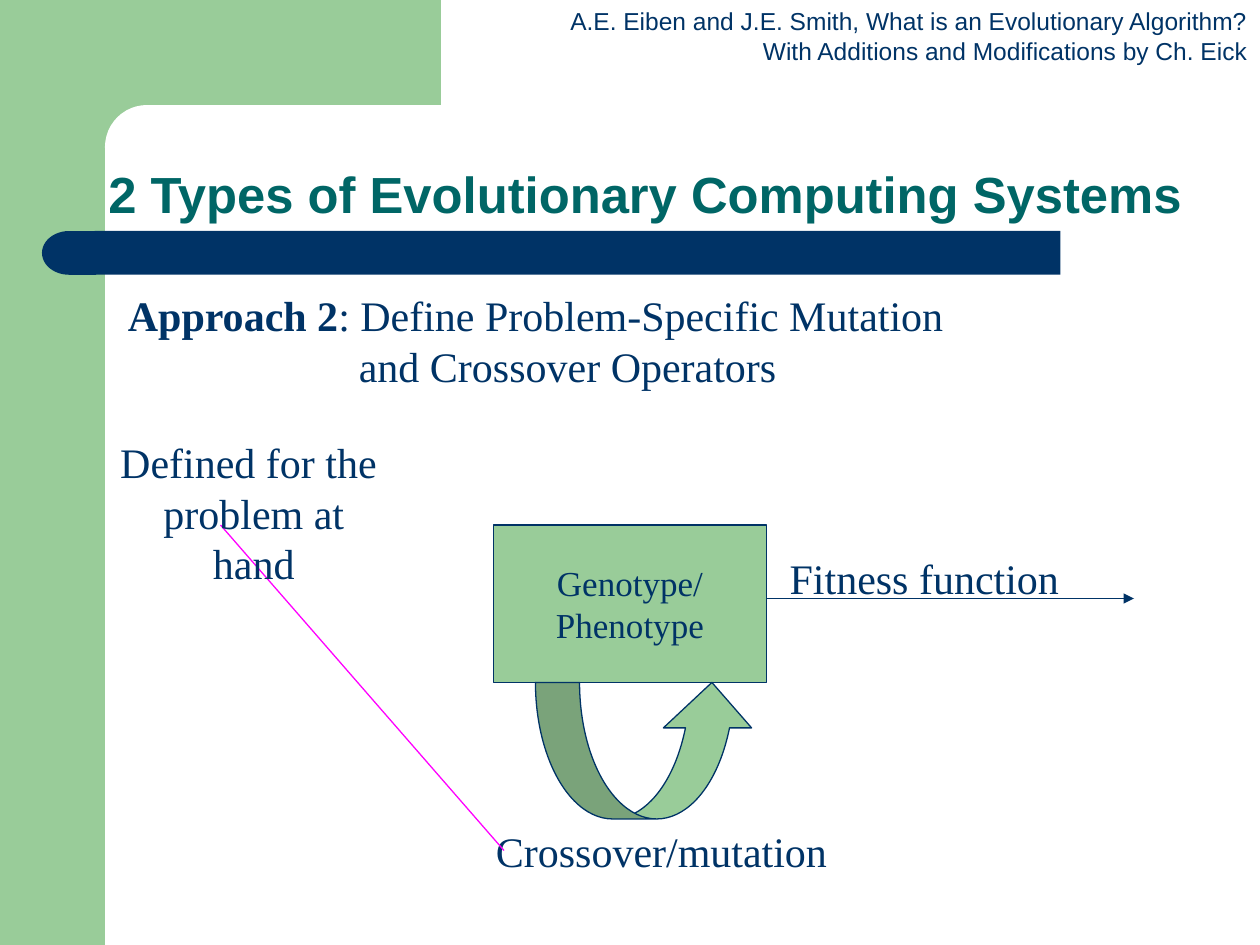
import pptx
import pptx.util
import pptx.dml.color
import pptx.enum.shapes
import pptx.enum.text
import pptx.oxml.ns
from lxml import etree

Pt = pptx.util.Pt
KIND = pptx.enum.shapes.MSO_SHAPE
ALIGN = pptx.enum.text.PP_ALIGN
ANCHOR = pptx.enum.text.MSO_ANCHOR
GREEN, NAVY, TEAL, WHITE, PINK = "99CC99", "003366", "006666", "FFFFFF", "FF00FF"
SERIF = "Times New Roman"


def paint(part, color):
    """Give a fill, line fill or font one solid colour."""
    if hasattr(part, "solid"):
        part.solid()
        part = part.fore_color
    else:
        part = part.color
    part.rgb = pptx.dml.color.RGBColor.from_string(color)


def add_form(slide, kind, box, fill, line=None, adjust=()):
    form = slide.shapes.add_shape(kind, *map(Pt, box))
    form.shadow.inherit = False
    paint(form.fill, fill)
    if line:
        paint(form.line.fill, line)
        form.line.width = Pt(0.75)
    else:
        form.line.fill.background()
    for i, value in enumerate(adjust):
        form.adjustments[i] = value
    return form


def write(shape, lines, size=24, font=SERIF, color=NAVY, align=ALIGN.CENTER,
          anchor=ANCHOR.TOP, wrap=False, bold=False, space=None, indents=()):
    """Fill a shape with lines; each line is a list of (text, bold) or a string."""
    frame = shape.text_frame
    frame.word_wrap = wrap
    frame.vertical_anchor = anchor
    for i, line in enumerate(lines):
        para = frame.paragraphs[0] if i == 0 else frame.add_paragraph()
        para.alignment = align
        if space:
            para.line_spacing = space
        if i < len(indents):
            para._p.get_or_add_pPr().set("marL", str(Pt(indents[i])))
        for text, heavy in [(line, bold)] if isinstance(line, str) else line:
            run = para.add_run()
            run.text = text
            run.font.size = Pt(size)
            run.font.name = font
            run.font.bold = heavy
            paint(run.font, color)


def add_text(slide, box, lines, **style):
    write(slide.shapes.add_textbox(*map(Pt, box)), lines, **style)


def add_line(slide, start, end, color, arrow=False):
    line = slide.shapes.add_connector(
        pptx.enum.shapes.MSO_CONNECTOR.STRAIGHT, *map(Pt, start + end))
    paint(line.line.fill, color)
    line.line.width = Pt(0.75)
    name = pptx.oxml.ns.qn
    if arrow:
        etree.SubElement(line.line._get_or_add_ln(), name("a:tailEnd"), type="triangle")
    etree.SubElement(line._element.spPr, name("a:effectLst"))


def add_frame(slide):
    """Draw the green corner, the navy bar and the credit line."""
    add_form(slide, KIND.RECTANGLE, (0, 0, 60, 540), GREEN)
    add_form(slide, KIND.RECTANGLE, (54, 0, 198, 84), GREEN)
    add_form(slide, KIND.ROUNDED_RECTANGLE, (60, 60, 402, 48), WHITE, adjust=[0.5])
    add_form(slide, KIND.ROUNDED_RECTANGLE, (54, 132, 552, 25), NAVY, adjust=[0])
    cap = add_form(slide, KIND.FLOWCHART_DELAY, (24, 132, 31, 25), NAVY)
    cap.rotation = 180
    add_text(slide, (306, 0, 414, 41),
             ["A.E. Eiben and J.E. Smith, What is an Evolutionary Algorithm?",
              "With Additions and Modifications by Ch. Eick"],
             size=14, font="Arial", align=ALIGN.RIGHT, wrap=True)


def add_flow(slide):
    """Draw the genotype box with its arrows and labels."""
    add_text(slide, (444, 312, 168.5, 36), ["Fitness function"])
    box = add_form(slide, KIND.RECTANGLE, (282, 300, 156, 90), GREEN, NAVY)
    write(box, ["Genotype/", "Phenotype"], size=20, anchor=ANCHOR.MIDDLE)
    add_line(slide, (438, 342), (648, 342), NAVY, arrow=True)
    add_form(slide, KIND.CURVED_UP_ARROW, (306, 390, 126, 78), GREEN, NAVY,
             [0.323, 0.646, 0.333])
    add_text(slide, (276, 468, 204, 36), ["Crossover/mutation"])
    add_line(slide, (288, 486), (126, 300), PINK)
    add_text(slide, (60, 246, 170, 65), ["Defined for the ", "problem at hand"])


def main():
    deck = pptx.Presentation()
    deck.slide_width, deck.slide_height = Pt(720), Pt(540)
    slide = deck.slides.add_slide(deck.slide_layouts[6])
    add_frame(slide)
    add_text(slide, (18, 90, 702, 42), ["2 Types of Evolutionary Computing Systems"],
             size=29, font="Arial", color=TEAL, bold=True, wrap=True,
             anchor=ANCHOR.BOTTOM, space=0.9)
    add_text(slide, (66, 162, 487, 65),
             [[("Approach 2", True), (": Define Problem-Specific Mutation", False)],
              "and Crossover Operators"],
             align=ALIGN.LEFT, wrap=True, indents=(0, 132))
    add_flow(slide)
    deck.save("out.pptx")


if __name__ == "__main__":
    main()
